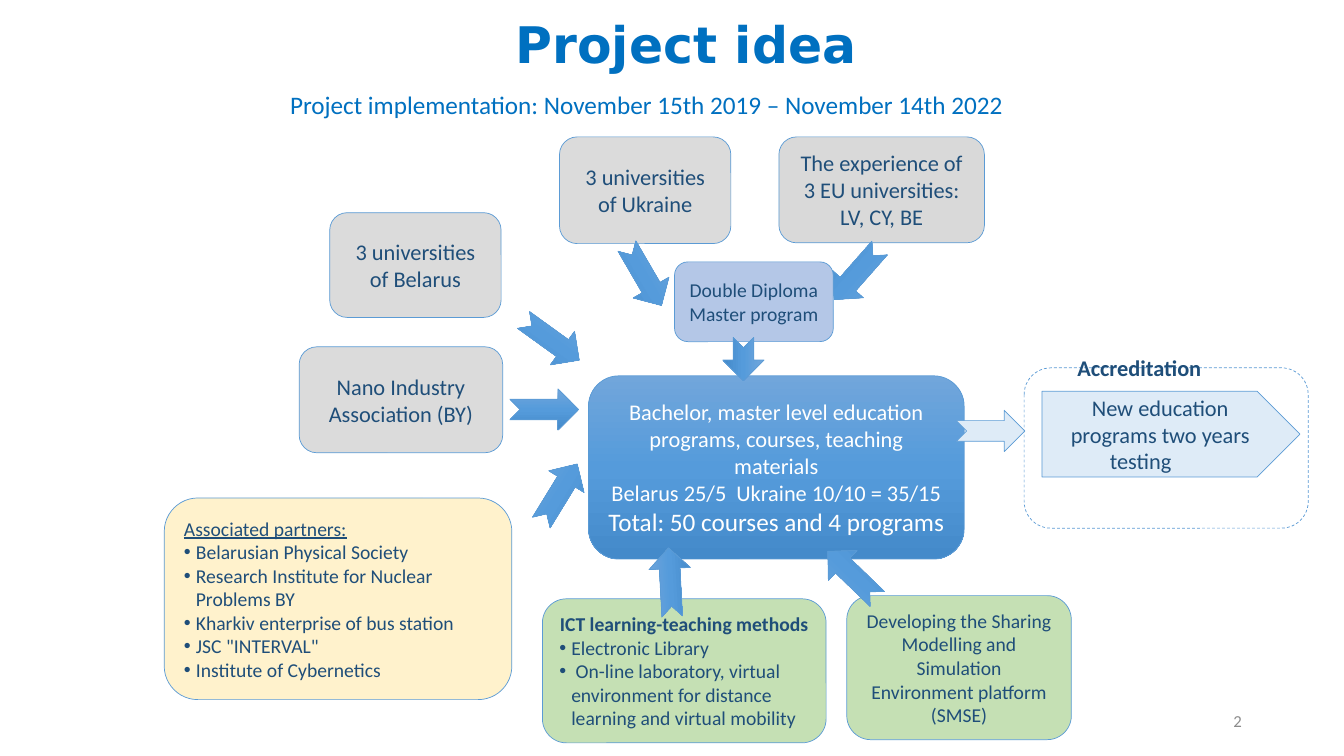
from copy import deepcopy
from dataclasses import dataclass

from lxml.etree import SubElement
from pptx import Presentation
from pptx.dml.color import RGBColor
from pptx.enum.dml import MSO_LINE
from pptx.enum.shapes import MSO_SHAPE as Shape
from pptx.enum.text import MSO_ANCHOR as Anchor, PP_ALIGN as Align
from pptx.oxml.ns import qn
from pptx.util import Cm, Pt


@dataclass(frozen=True)
class Theme:
    font: str = "Calibri"
    title_font: str = "DejaVu Sans"
    heading: str = "0070C0"
    ink: str = "1F4E79"
    white: str = "FFFFFF"
    muted: str = "8C8C8C"
    outline: str = "5B9BD5"
    grey: str = "DBDBDB"
    eu_grey: str = "D9D9D9"
    green: str = "C5E0B4"
    yellow: str = "FFF2CC"
    lilac: str = "B4C7E7"
    pale: str = "DEEBF7"
    gradient: tuple = ("71A6DB", "559BDB", "448ACA")
    title_size: int = 36
    large: int = 18
    body: int = 16
    small: int = 14
    tiny: int = 12


THEME = Theme()
ARROW_W, ARROW_H = 1.73, 1.04

# Grey contributor boxes: text, fill, position and size in cm
CONTRIBUTORS = [
    ("3 universities of Belarus", THEME.grey, (8.31, 5.36, 4.32, 2.64)),
    ("3 universities of Ukraine", THEME.grey, (14.1, 3.45, 4.32, 2.69)),
    ("The experience of 3 EU universities: LV, CY, BE", THEME.eu_grey,
     (19.63, 3.45, 5.18, 2.67)),
    ("Nano Industry Association (BY)", THEME.grey, (7.54, 8.74, 5.13, 2.67)),
]

# Arrows into the core: left, top, rotation
INFLOWS = [
    (20.73, 6.38, 131.4),
    (15.37, 6.43, 59.8),
    (16.03, 14.15, 266.9),
    (13.23, 11.91, 301.5),
    (12.85, 9.8, 0),
    (13.03, 8.05, 35.8),
]

PARTNERS = [
    "Associated partners:",
    "Belarusian Physical Society",
    "Research Institute for Nuclear Problems BY",
    "Kharkiv enterprise of bus station",
    'JSC "INTERVAL"',
    "Institute of Cybernetics",
]

ICT_METHODS = [
    "ICT learning-teaching methods",
    "Electronic Library",
    " On-line laboratory, virtual environment for distance learning and virtual mobility",
]

CORE_LINES = [
    "Bachelor, master level education programs, courses, teaching materials",
    "Belarus 25/5  Ukraine 10/10 = 35/15",
    "Total: 50 courses and 4 programs",
]


def rgb(value):
    return RGBColor.from_string(value)


def write(tf, lines, size, color=THEME.ink, align=Align.CENTER,
          anchor=Anchor.MIDDLE, font=THEME.font, bold=False):
    tf.word_wrap = True
    tf.vertical_anchor = anchor
    tf.text = "\n".join(lines)
    for p in tf.paragraphs:
        p.alignment = align
        for r in p.runs:
            r.font.name = font
            r.font.size = Pt(size)
            r.font.bold = bold
            r.font.color.rgb = rgb(color)


def add_label(slide, box, text, size, color, **style):
    tb = slide.shapes.add_textbox(*map(Cm, box))
    write(tb.text_frame, [text], size, color, **style)
    return tb


def fill_gradient(s):
    s.fill.gradient()
    s.fill.gradient_angle = 270
    first = s._element.spPr.find(".//" + qn("a:gs"))
    first.addnext(deepcopy(first))
    for i, stop in enumerate(s.fill.gradient_stops):
        stop.color.rgb = rgb(THEME.gradient[i])
        stop.position = i / 2


def add_box(slide, box, fill=None, kind=Shape.ROUNDED_RECTANGLE):
    s = slide.shapes.add_shape(kind, *map(Cm, box))
    s.shadow.inherit = False
    s.line.color.rgb = rgb(THEME.outline)
    s.line.width = Pt(0.5)
    if fill is None:
        s.fill.background()
    elif fill == THEME.gradient:
        fill_gradient(s)
    else:
        s.fill.solid()
        s.fill.fore_color.rgb = rgb(fill)
    return s


def add_card(slide, box, fill, text, size, kind=Shape.ROUNDED_RECTANGLE):
    s = add_box(slide, box, fill, kind)
    write(s.text_frame, [text], size)


def add_list(slide, box, fill, lines):
    """Add a box with a heading and bullets, and return the heading."""
    s = add_box(slide, box, fill)
    write(s.text_frame, lines, THEME.small, align=Align.LEFT)
    heading, *items = s.text_frame.paragraphs
    for p in items:
        pPr = p._p.get_or_add_pPr()
        pPr.set("marL", str(Cm(0.3)))
        pPr.set("indent", str(-Cm(0.3)))
        SubElement(pPr, qn("a:buFont"), typeface="Arial")
        SubElement(pPr, qn("a:buChar"), char="•")
    return heading


def add_arrow(slide, left, top, rotation, fill=THEME.gradient, width=ARROW_W):
    s = add_box(slide, (left, top, width, ARROW_H), fill, Shape.NOTCHED_RIGHT_ARROW)
    s.rotation = rotation


def add_core(slide):
    s = add_box(slide, (14.83, 9.47, 9.47, 4.62), THEME.gradient)
    write(s.text_frame, CORE_LINES, THEME.body, THEME.white)
    s.text_frame.paragraphs[-1].runs[0].font.size = Pt(THEME.large)


def add_accreditation(slide):
    add_card(slide, (26.26, 9.86, 6.5, 2.16), THEME.pale,
             "New education programs two years testing \t", THEME.body, Shape.PENTAGON)
    add_arrow(slide, 24.1, 10.34, 0, THEME.pale)
    frame = add_box(slide, (25.81, 9.27, 7.16, 4.04))
    frame.line.dash_style = MSO_LINE.DASH
    add_label(slide, (26.9, 8.79, 5.21, 0.94), "Accreditation", THEME.body, THEME.ink,
              align=Align.LEFT, anchor=Anchor.TOP, bold=True)


def main():
    prs = Presentation()
    prs.slide_width, prs.slide_height = Cm(33.87), Cm(19.05)
    slide = prs.slides.add_slide(prs.slide_layouts[6])

    # Headings and page number
    title = add_label(slide, (5.11, 0.18, 24.36, 2.03), "Project idea", THEME.title_size,
                      THEME.heading, font=THEME.title_font, bold=True)
    title.text_frame.paragraphs[0].line_spacing = 0.9
    add_label(slide, (7.06, 2.13, 23.37, 1.02),
              "Project implementation: November 15th 2019 – November 14th 2022",
              THEME.large, THEME.heading, align=Align.LEFT, anchor=Anchor.TOP)
    add_label(slide, (23.93, 17.65, 7.62, 1.02), "2", THEME.tiny, THEME.muted,
              align=Align.RIGHT)

    # Core programme and its contributors
    add_core(slide)
    for text, fill, box in CONTRIBUTORS:
        add_card(slide, box, fill, text, THEME.body)

    # Bulleted boxes
    heading = add_list(slide, (13.67, 15.09, 7.15, 3.63), THEME.green, ICT_METHODS)
    heading.alignment = Align.CENTER
    heading.runs[0].font.bold = True
    heading = add_list(slide, (4.14, 12.55, 8.76, 5.08), THEME.yellow, PARTNERS)
    heading.runs[0].font.underline = True

    # Inflows, then the accreditation outcome
    for left, top, rotation in INFLOWS:
        add_arrow(slide, left, top, rotation)
    add_accreditation(slide)

    # Platform and double diploma, with their arrows on top
    add_card(slide, (21.34, 15.01, 5.66, 3.63), THEME.green,
             "Developing the Sharing Modelling and Simulation Environment platform (SMSE)",
             THEME.small)
    add_card(slide, (17, 6.6, 4, 2.01), THEME.lilac, "Double Diploma Master program",
             THEME.small)
    add_arrow(slide, 18.19, 8.53, 90, width=1.09)
    add_arrow(slide, 20.62, 13.97, 224)

    prs.save("out.pptx")


if __name__ == "__main__":
    main()
